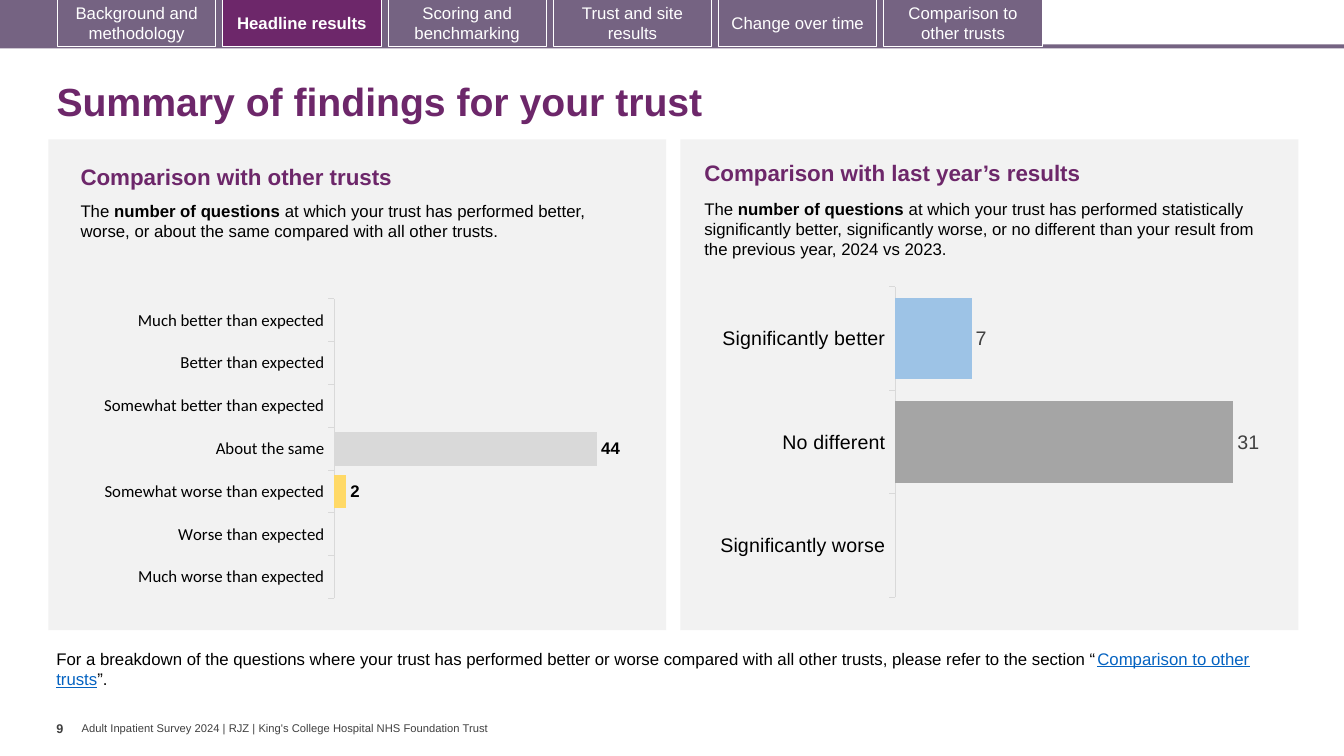
from dataclasses import dataclass

from pptx import Presentation
from pptx import util as u
from pptx.chart.data import CategoryChartData
from pptx.dml.color import RGBColor
from pptx.enum import chart as ch, shapes, text
from pptx.oxml import parse_xml
from pptx.oxml.ns import nsdecls, qn

PLUM = RGBColor(0x6D, 0x27, 0x6A)
MAUVE = RGBColor(0x75, 0x63, 0x82)
WHITE = RGBColor(0xFF, 0xFF, 0xFF)
BLACK = RGBColor(0, 0, 0)
CHARCOAL = RGBColor(0x40, 0x40, 0x40)
PANEL_GREY = RGBColor(0xF2, 0xF2, 0xF2)
AXIS_GREY = RGBColor(0xD9, 0xD9, 0xD9)
MID_GREY = RGBColor(0xA5, 0xA5, 0xA5)
LINK_BLUE = RGBColor(0x05, 0x63, 0xC1)
SKY = RGBColor(0x9D, 0xC3, 0xE6)
PURPLE = RGBColor(0x70, 0x30, 0xA0)
TEAL = RGBColor(0x41, 0x99, 0x99)
GREEN = RGBColor(0x5F, 0xBD, 0x83)
PALE_GREEN = RGBColor(0xA9, 0xD1, 0x8E)
YELLOW = RGBColor(0xFF, 0xD9, 0x66)
AMBER = RGBColor(0xF1, 0xBE, 0x48)
ORANGE = RGBColor(0xE8, 0x77, 0x22)

FONT = "Arial"
TABS = ["Background and methodology", "Headline results", "Scoring and benchmarking",
        "Trust and site results", "Change over time", "Comparison to other trusts"]
CURRENT_TAB = "Headline results"


@dataclass
class Box:
    left: float
    top: float
    width: float
    height: float

    def emu(self) -> tuple:
        return tuple(u.Cm(n) for n in (self.left, self.top, self.width, self.height))


@dataclass
class Bar:
    label: str
    value: int | None
    color: RGBColor


@dataclass
class BarChart:
    box: Box
    plot: Box
    bars: list[Bar]
    maximum: int
    size: int
    axis_font: str
    label_color: RGBColor
    label_bold: bool


@dataclass
class Panel:
    box: Box
    heading_box: Box
    heading: str
    summary_box: Box
    summary: str
    chart: BarChart


PANELS = [
    Panel(Box(1.22, 3.51, 15.57, 12.37),
          Box(1.78, 3.99, 14.02, 0.94), "Comparison with other trusts",
          Box(1.78, 4.93, 13.44, 1.8),
          "at which your trust has performed better, worse, or about the same "
          "compared with all other trusts.",
          BarChart(Box(1.04, 6.91, 15.82, 8.66), Box(0.467, 0.072, 0.476, 0.872),
                   [Bar("Much better than expected", None, TEAL),
                    Bar("Better than expected", None, GREEN),
                    Bar("Somewhat better than expected", None, PALE_GREEN),
                    Bar("About the same", 44, AXIS_GREY),
                    Bar("Somewhat worse than expected", 2, YELLOW),
                    Bar("Worse than expected", None, AMBER),
                    Bar("Much worse than expected", None, ORANGE)],
                   50, 12, "Calibri", BLACK, True)),
    Panel(Box(17.15, 3.51, 15.57, 12.37),
          Box(17.5, 3.89, 13.92, 0.94), "Comparison with last year’s results",
          Box(17.5, 4.88, 14.58, 1.8),
          "at which your trust has performed statistically significantly better, "
          "significantly worse, or no different than your result from the previous "
          "year, 2024 vs 2023.",
          BarChart(Box(16.87, 6.93, 15.82, 8.61), Box(0.36, 0.035, 0.608, 0.909),
                   [Bar("Significantly better", 7, SKY),
                    Bar("No different", 31, MID_GREY),
                    Bar("Significantly worse", None, PURPLE)],
                   35, 14, FONT, CHARCOAL, False)),
]


def set_font(font, *, size: float, color: RGBColor, name: str = FONT,
             bold: bool = False, underline: bool = False) -> None:
    font.name, font.size, font.bold = name, u.Pt(size), bold
    font.underline = underline
    font.color.rgb = color


def write(p, content: str, **fmt) -> None:
    r = p.add_run()
    r.text = content
    set_font(r.font, **fmt)


def add_box(s, box: Box, *, wrap: bool = True):
    tf = s.shapes.add_textbox(*box.emu()).text_frame
    tf.word_wrap = wrap
    return tf


def add_rect(s, box: Box, fill: RGBColor | None, line: RGBColor | None = None):
    sp = s.shapes.add_shape(shapes.MSO_SHAPE.RECTANGLE, *box.emu())
    sp.shadow.inherit = False
    if fill is None:
        sp.fill.background()
    else:
        sp.fill.solid()
        sp.fill.fore_color.rgb = fill
    if line is None:
        sp.line.fill.background()
    else:
        sp.line.color.rgb = line
        sp.line.width = u.Pt(0.75)
    return sp


def add_tab(s, index: int, label: str) -> None:
    current = label == CURRENT_TAB
    box = Box(1.45 + 4.165 * index, -0.03, 3.99, 1.2)
    tf = add_rect(s, box, PLUM if current else None, WHITE).text_frame
    tf.word_wrap = True
    tf.vertical_anchor = text.MSO_ANCHOR.MIDDLE
    p = tf.paragraphs[0]
    p.alignment = text.PP_ALIGN.CENTER
    write(p, label, size=12, color=WHITE, bold=current)


def clear_background(chart) -> None:
    no_fill = f'<c:spPr {nsdecls("c", "a")}><a:noFill/><a:ln><a:noFill/></a:ln></c:spPr>'
    chart.element.find(qn("c:chart")).addnext(parse_xml(no_fill))
    chart.element.find(".//" + qn("c:plotArea")).append(parse_xml(no_fill))


def place_plot(chart, plot: Box) -> None:
    area = chart.element.find(".//" + qn("c:plotArea"))
    for old in area.findall(qn("c:layout")):
        area.remove(old)
    area.insert(0, parse_xml(
        f'<c:layout {nsdecls("c")}><c:manualLayout><c:layoutTarget val="inner"/>'
        f'<c:xMode val="edge"/><c:yMode val="edge"/>'
        f'<c:x val="{plot.left}"/><c:y val="{plot.top}"/>'
        f'<c:w val="{plot.width}"/><c:h val="{plot.height}"/>'
        f'</c:manualLayout></c:layout>'))


def add_bar_chart(s, spec: BarChart) -> None:
    data = CategoryChartData(number_format="0")
    data.categories = [bar.label for bar in spec.bars]
    data.add_series("Series 1", [bar.value for bar in spec.bars])
    chart = s.shapes.add_chart(ch.XL_CHART_TYPE.BAR_CLUSTERED, *spec.box.emu(), data).chart
    chart.has_legend = chart.has_title = False
    clear_background(chart)
    place_plot(chart, spec.plot)
    set_font(chart.font, size=spec.size, color=BLACK, name=spec.axis_font)

    cat = chart.category_axis
    cat.reverse_order = True
    cat.has_major_gridlines = False
    cat.major_tick_mark = ch.XL_TICK_MARK.OUTSIDE
    cat.format.line.color.rgb = AXIS_GREY
    cat.format.line.width = u.Pt(0.75)
    set_font(cat.tick_labels.font, size=spec.size, color=BLACK, name=spec.axis_font)
    val = chart.value_axis
    val.visible = val.has_major_gridlines = False
    val.minimum_scale, val.maximum_scale = 0, spec.maximum

    plot = chart.plots[0]
    plot.gap_width = 27
    plot.vary_by_categories = False
    plot.has_data_labels = True
    labels = plot.data_labels
    labels.show_value = True
    labels.position = ch.XL_LABEL_POSITION.OUTSIDE_END
    set_font(labels.font, size=spec.size, color=spec.label_color, bold=spec.label_bold)
    for i, bar in enumerate(spec.bars):
        fill = plot.series[0].points[i].format.fill
        fill.solid()
        fill.fore_color.rgb = bar.color


def add_panel(s, panel: Panel) -> None:
    add_rect(s, panel.box, PANEL_GREY)
    write(add_box(s, panel.heading_box).paragraphs[0], panel.heading,
          size=16, color=PLUM, bold=True)
    p = add_box(s, panel.summary_box).paragraphs[0]
    write(p, "The ", size=12, color=BLACK)
    write(p, "number of questions ", size=12, color=BLACK, bold=True)
    write(p, panel.summary, size=12, color=BLACK)
    add_bar_chart(s, panel.chart)


def add_title(s, content: str) -> None:
    sp = s.shapes.title
    sp.left, sp.top, sp.width, sp.height = Box(1.17, 1.7, 31.72, 1.83).emu()
    tf = sp.text_frame
    tf.auto_size = text.MSO_AUTO_SIZE.NONE
    tf.vertical_anchor = text.MSO_ANCHOR.MIDDLE
    p = tf.paragraphs[0]
    p.alignment = text.PP_ALIGN.LEFT
    p.line_spacing = 0.9
    write(p, content, size=28, color=PLUM, bold=True)


def add_footer(s) -> None:
    tf = add_box(s, Box(2.06, 18.19, 15.49, 0.33))
    tf.margin_left = tf.margin_right = tf.margin_top = tf.margin_bottom = 0
    tf.vertical_anchor = text.MSO_ANCHOR.MIDDLE
    write(tf.paragraphs[0], "Adult Inpatient Survey 2024 | RJZ | King's College Hospital "
          "NHS Foundation Trust", size=8, color=CHARCOAL)
    tf = add_box(s, Box(1.42, 18.03, 0.64, 1.02), wrap=False)
    tf.margin_left = tf.margin_right = 0
    write(tf.paragraphs[0], "9", size=9, color=CHARCOAL, bold=True)


def main() -> None:
    prs = Presentation()
    prs.slide_width, prs.slide_height = u.Cm(33.87), u.Cm(19.05)
    s = prs.slides.add_slide(prs.slide_layouts[5])
    add_rect(s, Box(-0.08, 1.12, 33.95, 0.1), MAUVE)
    add_rect(s, Box(-0.08, 0, 26.34, 1.19), MAUVE)
    for i, label in enumerate(TABS):
        add_tab(s, i, label)
    add_title(s, "Summary of findings for your trust")
    for panel in PANELS:
        add_panel(s, panel)
    p = add_box(s, Box(1.17, 16.21, 31.01, 1.27)).paragraphs[0]
    write(p, "For a breakdown of the questions where your trust has performed better or "
          "worse compared with all other trusts, please refer to the section “",
          size=12, color=BLACK)
    write(p, "Comparison to other trusts", size=12, color=LINK_BLUE, underline=True)
    write(p, "”.", size=12, color=BLACK)
    add_footer(s)
    prs.save("out.pptx")


if __name__ == "__main__":
    main()
